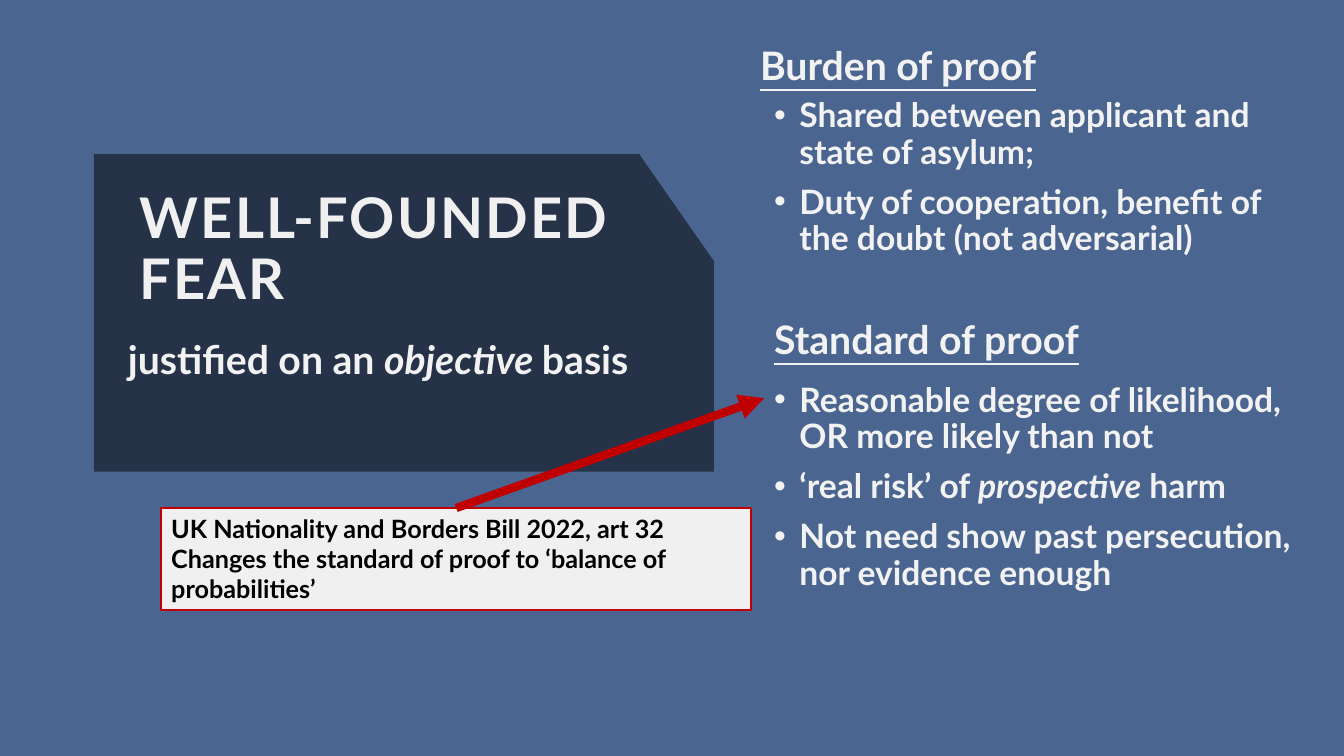
from dataclasses import dataclass

import lxml.etree
import pptx
import pptx.dml.color
import pptx.enum.dml
import pptx.enum.shapes
import pptx.enum.text
import pptx.oxml.ns
import pptx.util

Inches = pptx.util.Inches
Pt = pptx.util.Pt
Anchor = pptx.enum.text.MSO_ANCHOR
qn = pptx.oxml.ns.qn


@dataclass(frozen=True)
class Theme:
    face: str = "Lato"
    back: str = "4A6590"
    panel: str = "253248"
    pale: str = "F1F0F0"
    text: str = "F2F2F2"
    dark: str = "000000"
    red: str = "C00000"
    title: int = 40
    head: int = 28
    body: int = 24
    note: int = 18


THEME = Theme()


@dataclass(frozen=True)
class Style:
    size: int
    color: str = THEME.text
    under: bool = False
    bullet: bool = False
    line: float = 0.9
    before: int = 10
    track: int = 0  # hundredths of a point


@dataclass(frozen=True)
class Block:
    left: float
    top: float
    width: float
    height: float
    lines: tuple[str, ...]  # asterisks enclose italics
    style: Style
    anchor: Anchor = Anchor.TOP


HEAD = Style(THEME.head, under=True)
LIST = Style(THEME.body, bullet=True)

BLOCKS = (
    Block(1.29, 1.81, 5.04, 1.33, ("WELL-FOUNDED FEAR",),
          Style(THEME.title, THEME.pale, before=0, track=150), Anchor.BOTTOM),
    Block(1.17, 3.33, 5.85, 0.62, ("justified on an *objective *basis",),
          Style(THEME.head)),
    Block(7.44, 0.41, 5.35, 0.62, ("Burden of proof",), HEAD),
    Block(7.58, 0.93, 5.35, 0.62, (
        "Shared between applicant and state of asylum;",
        "Duty of cooperation, benefit of the doubt (not adversarial)",
    ), LIST),
    Block(7.58, 3.13, 5.35, 0.62, ("Standard of proof",), HEAD),
    Block(7.58, 3.75, 5.35, 0.62, (
        "Reasonable degree of likelihood, OR more likely than not",
        "‘real risk’ of *prospective* harm",
        "Not need show past persecution, nor evidence enough",
    ), LIST),
)

NOTE = Block(1.6, 5.04, 5.85, 1.01, (
    "UK Nationality and Borders Bill 2022, art 32",
    "Changes the standard of proof to ‘balance of probabilities’",
), Style(THEME.note, THEME.dark, line=1.0, before=0))

PANEL = ((0.93, 1.53), (6.34, 1.53), (7.08, 2.59), (7.08, 4.68), (0.93, 4.68))


def rgb(code: str) -> pptx.dml.color.RGBColor:
    return pptx.dml.color.RGBColor.from_string(code)


def paint(shape, code: str) -> None:
    shape.fill.solid()
    shape.fill.fore_color.rgb = rgb(code)
    shape.shadow.inherit = False


def write(frame, block: Block) -> None:
    """Fill a text frame with the lines of a block."""
    style = block.style
    frame.word_wrap = True
    frame.vertical_anchor = block.anchor
    for i, line in enumerate(block.lines):
        para = frame.add_paragraph() if i else frame.paragraphs[0]
        if style.bullet:
            props = para._p.get_or_add_pPr()
            props.set("marL", str(Inches(0.25)))
            props.set("indent", str(-Inches(0.25)))
            lxml.etree.SubElement(props, qn("a:buFont")).set("typeface", "Arial")
            lxml.etree.SubElement(props, qn("a:buChar")).set("char", "•")
        para.alignment = pptx.enum.text.PP_ALIGN.LEFT
        para.line_spacing = style.line
        para.space_before = Pt(style.before)
        font = para.font
        font.name = THEME.face
        font.size = Pt(style.size)
        font.bold = True
        font.underline = style.under
        font.color.rgb = rgb(style.color)
        for j, part in enumerate(line.split("*")):
            run = para.add_run()
            run.text = part
            if j % 2:
                run.font.italic = True
            if style.track:
                run._r.get_or_add_rPr().set("spc", str(style.track))


def area(block: Block) -> tuple:
    return tuple(Inches(n) for n in
                 (block.left, block.top, block.width, block.height))


def main() -> None:
    deck = pptx.Presentation()
    deck.slide_width, deck.slide_height = Inches(13.33), Inches(7.5)
    slide = deck.slides.add_slide(deck.slide_layouts[6])
    slide.background.fill.solid()
    slide.background.fill.fore_color.rgb = rgb(THEME.back)
    shapes = slide.shapes

    # Dark panel with a cut corner
    start, *rest = [(Inches(x), Inches(y)) for x, y in PANEL]
    path = shapes.build_freeform(*start)
    path.add_line_segments(rest, close=True)
    panel = path.convert_to_shape()
    paint(panel, THEME.panel)
    panel.line.fill.background()

    # Title, headings and lists
    for block in BLOCKS:
        write(shapes.add_textbox(*area(block)).text_frame, block)

    # Boxed note
    note = shapes.add_shape(pptx.enum.shapes.MSO_SHAPE.RECTANGLE, *area(NOTE))
    paint(note, THEME.pale)
    note.line.color.rgb = rgb(THEME.red)
    note.line.width = Pt(1.5)
    write(note.text_frame, NOTE)
    note.text_frame.auto_size = pptx.enum.text.MSO_AUTO_SIZE.SHAPE_TO_FIT_TEXT

    # Arrow from the note to the first standard
    arrow = shapes.add_connector(
        pptx.enum.shapes.MSO_CONNECTOR.STRAIGHT,
        Inches(4.52), Inches(5.04), Inches(7.58), Inches(3.95))
    arrow.begin_connect(note, 0)
    arrow.line.color.rgb = rgb(THEME.red)
    arrow.line.width = Pt(6)
    tip = lxml.etree.SubElement(arrow.line._get_or_add_ln(), qn("a:tailEnd"))
    tip.set("type", "triangle")
    lxml.etree.SubElement(arrow._element.spPr, qn("a:effectLst"))

    deck.save("out.pptx")


if __name__ == "__main__":
    main()
